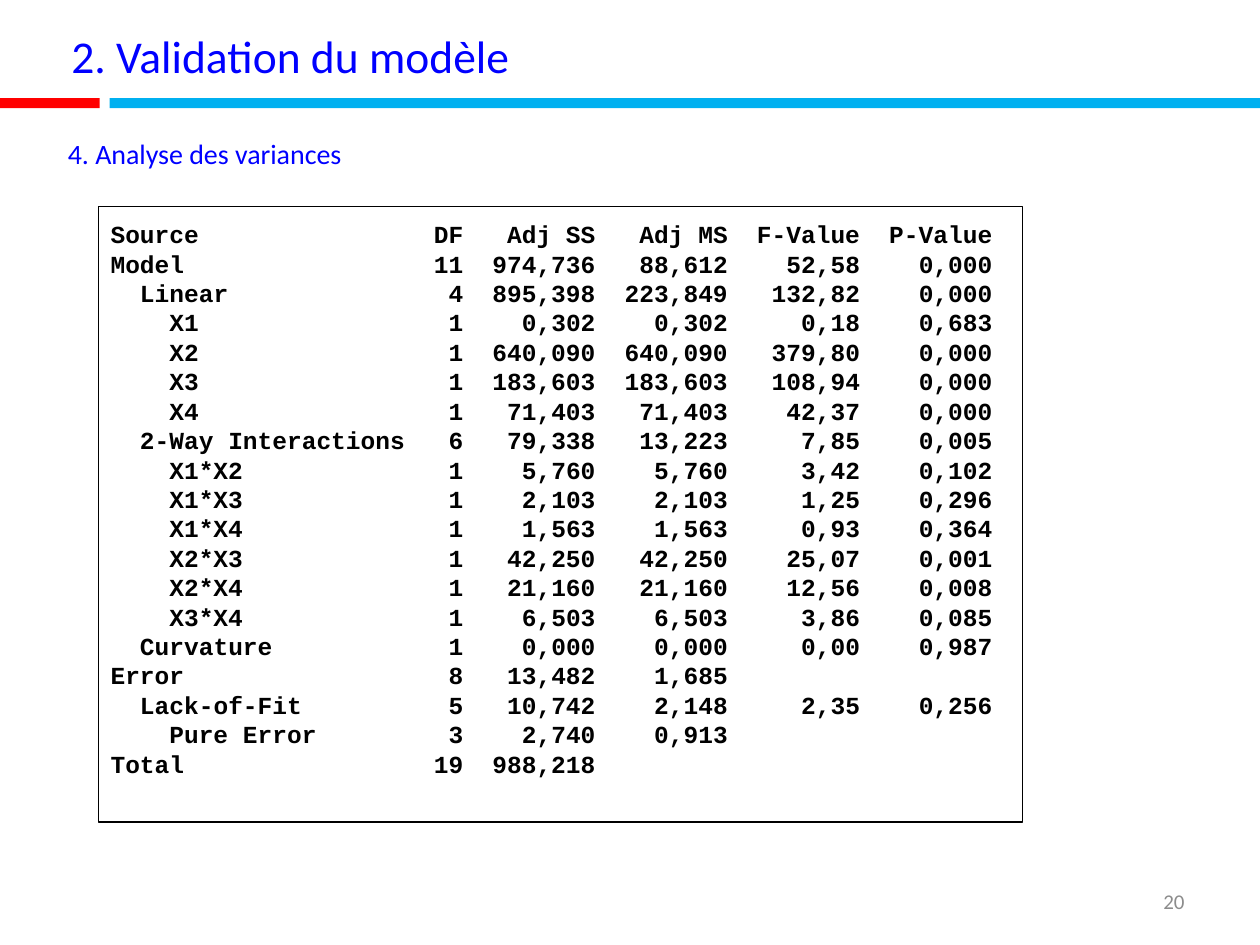
from dataclasses import dataclass

import pptx
import pptx.dml.color
import pptx.enum.shapes
import pptx.enum.text
import pptx.oxml
import pptx.oxml.ns
import pptx.util

Cm = pptx.util.Cm
Pt = pptx.util.Pt
Color = pptx.dml.color.RGBColor
Align = pptx.enum.text.PP_ALIGN
Anchor = pptx.enum.text.MSO_ANCHOR

BLUE = Color(0x00, 0x00, 0xFF)
CYAN = Color(0x00, 0xB0, 0xF0)
RED = Color(0xFF, 0x00, 0x00)
GREY = Color(0x8C, 0x8C, 0x8C)
BLACK = Color(0x00, 0x00, 0x00)

CHAR = 0.2963
STOPS = [(2, "l"), (4, "l"), (24, "r"), (33, "r"), (42, "r"), (51, "r"), (60, "r")]


@dataclass(frozen=True)
class Box:
    left: float
    top: float
    width: float
    height: float

    def cm(self) -> list:
        return [Cm(side) for side in (self.left, self.top, self.width, self.height)]


@dataclass(frozen=True)
class Label:
    text: str
    box: Box
    size: int
    color: Color
    align: Align = Align.LEFT


@dataclass(frozen=True)
class Bar:
    box: Box
    color: Color


@dataclass(frozen=True)
class Row:
    level: int
    source: str
    values: str


LABELS = [
    Label("20", Box(18.21, 17.65, 5.92, 1.02), 12, GREY, Align.RIGHT),
    Label("2. Validation du modèle", Box(1.19, 0.41, 11.3, 1.4), 26, BLUE),
    Label(" 4. Analyse des variances", Box(0.99, 2.39, 11.3, 1.4), 16, BLUE),
]

BARS = [
    Bar(Box(2.21, 1.98, 23.19, 0.2), CYAN),
    Bar(Box(0, 1.98, 2.01, 0.2), RED),
]

HEAD = ["Source", "DF", "Adj SS", "Adj MS", "F-Value", "P-Value"]

ROWS = [
    Row(0, "Model", "11 974,736 88,612 52,58 0,000"),
    Row(1, "Linear", "4 895,398 223,849 132,82 0,000"),
    Row(2, "X1", "1 0,302 0,302 0,18 0,683"),
    Row(2, "X2", "1 640,090 640,090 379,80 0,000"),
    Row(2, "X3", "1 183,603 183,603 108,94 0,000"),
    Row(2, "X4", "1 71,403 71,403 42,37 0,000"),
    Row(1, "2-Way Interactions", "6 79,338 13,223 7,85 0,005"),
    Row(2, "X1*X2", "1 5,760 5,760 3,42 0,102"),
    Row(2, "X1*X3", "1 2,103 2,103 1,25 0,296"),
    Row(2, "X1*X4", "1 1,563 1,563 0,93 0,364"),
    Row(2, "X2*X3", "1 42,250 42,250 25,07 0,001"),
    Row(2, "X2*X4", "1 21,160 21,160 12,56 0,008"),
    Row(2, "X3*X4", "1 6,503 6,503 3,86 0,085"),
    Row(1, "Curvature", "1 0,000 0,000 0,00 0,987"),
    Row(0, "Error", "8 13,482 1,685"),
    Row(1, "Lack-of-Fit", "5 10,742 2,148 2,35 0,256"),
    Row(2, "Pure Error", "3 2,740 0,913"),
    Row(0, "Total", "19 988,218"),
]


def add_run(para, text: str, face: str, size: int, color: Color, bold: bool = False) -> None:
    run = para.add_run()
    run.text = text
    run.font.name = face
    run.font.size = Pt(size)
    run.font.bold = bold
    run.font.color.rgb = color


def add_label(slide, label: Label) -> None:
    frame = slide.shapes.add_textbox(*label.box.cm()).text_frame
    frame.word_wrap = True
    frame.vertical_anchor = Anchor.MIDDLE
    para = frame.paragraphs[0]
    para.alignment = label.align
    add_run(para, label.text, "Calibri", label.size, label.color)


def add_rect(shapes, box: Box):
    rect = shapes.add_shape(pptx.enum.shapes.MSO_SHAPE.RECTANGLE, *box.cm())
    rect.shadow.inherit = False
    return rect


def add_bar(shapes, bar: Bar) -> None:
    rect = add_rect(shapes, bar.box)
    rect.fill.solid()
    rect.fill.fore_color.rgb = bar.color
    rect.line.fill.background()


def set_tabs(para) -> None:
    tabs = pptx.oxml.parse_xml(f"<a:tabLst {pptx.oxml.ns.nsdecls('a')}/>")
    for chars, side in STOPS:
        tab = tabs.makeelement(pptx.oxml.ns.qn("a:tab"), {})
        tab.set("pos", str(int(Cm(chars * CHAR))))
        tab.set("algn", side)
        tabs.append(tab)
    para._p.get_or_add_pPr().append(tabs)


def add_panel(slide, box: Box, lines: list[str]) -> None:
    rect = add_rect(slide.shapes, box)
    rect.fill.background()
    rect.line.color.rgb = BLACK
    rect.line.width = Pt(0.75)
    frame = rect.text_frame
    frame.word_wrap = True
    frame.vertical_anchor = Anchor.TOP
    frame.margin_top = Cm(0.25)
    for index, line in enumerate(lines):
        para = frame.add_paragraph() if index else frame.paragraphs[0]
        para.alignment = Align.LEFT
        para.line_spacing = Pt(16.8)
        set_tabs(para)
        add_run(para, line, "Courier New", 14, BLACK, True)


def main() -> None:
    deck = pptx.Presentation()
    deck.slide_width = Cm(25.4)
    deck.slide_height = Cm(19.05)
    slide = deck.slides.add_slide(deck.slide_layouts[6])
    group = slide.shapes.add_group_shape()
    for bar in BARS:
        add_bar(group.shapes, bar)
    for label in LABELS:
        add_label(slide, label)
    lines = ["\t".join(HEAD)]
    for row in ROWS:
        lines.append("\t" * row.level + "\t".join([row.source, *row.values.split()]))
    add_panel(slide, Box(1.98, 4.17, 18.64, 12.4), lines)
    deck.save("out.pptx")


if __name__ == "__main__":
    main()
